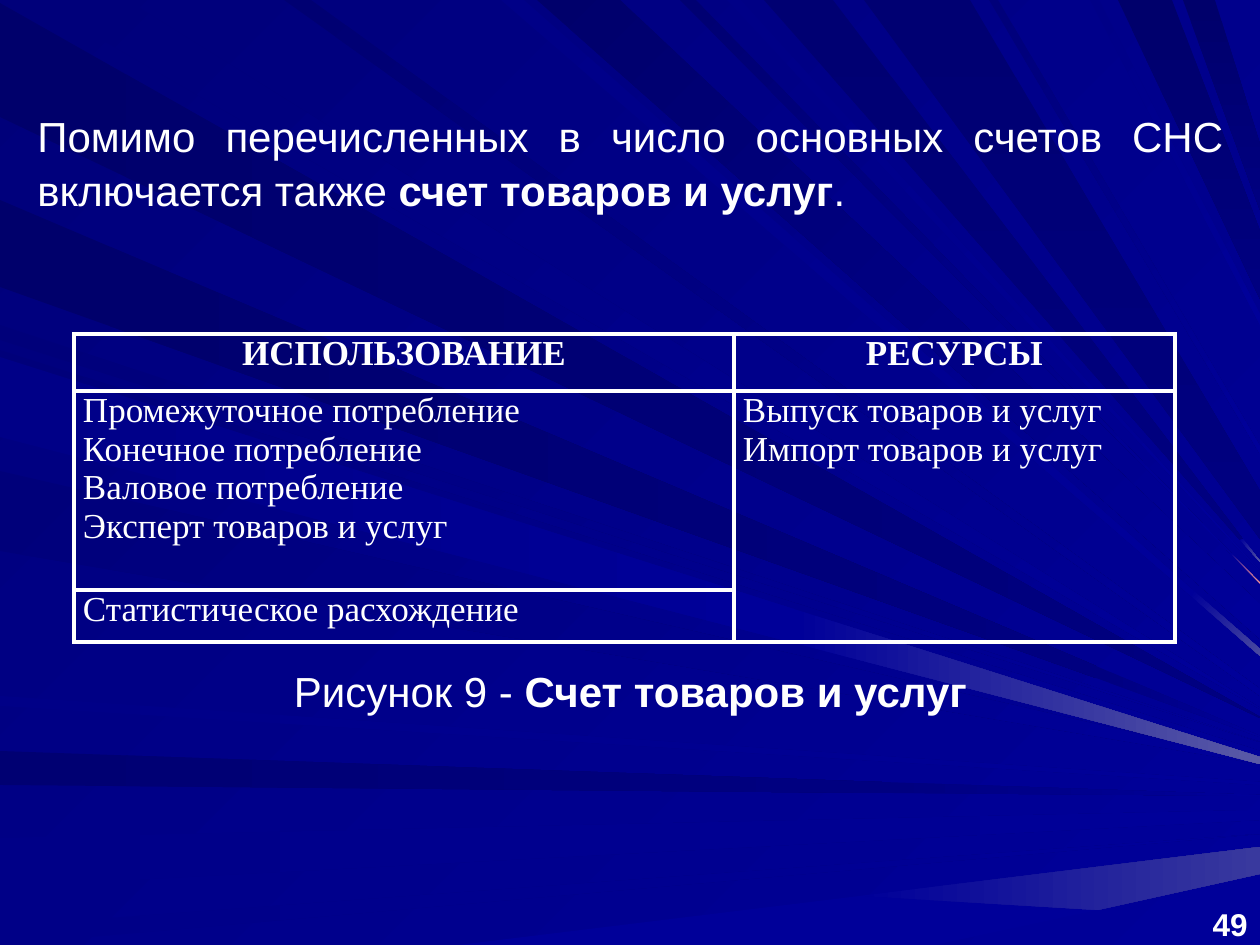
from lxml.etree import SubElement
from pptx import Presentation
from pptx.dml.color import RGBColor
from pptx.enum.text import MSO_ANCHOR as Anchor, PP_ALIGN as Align
from pptx.oxml.ns import qn
from pptx.util import Pt

PX = 914400 / 126
W, H = 1260, 945

COLORS = {
    "ink": "00006B", "night": "000072", "navy": "00007A", "dark": "000080",
    "royal": "000087", "blue": "000099", "white": "FFFFFF", "pink": "FF9999",
    "mist": "39399E", "haze": "4A4AA1", "glow": "5A5AA6",
}

# Light rays, back to front: slide edge they leave, the two places on that edge,
# the two heights at the right edge, first and last colour,
# then for rays with a tip: share of the length before it, its last colour
RAYS = [
    ("left", (3, 117), (717, 718), "ink", "dark"),
    ("top", (127, 33), (708, 709), "navy", "blue"),
    ("left", (751, 785), (795, 796), "night", "dark", 0.7, "blue"),
    ("left", (838, 887), (810, 820), "royal", "blue"),
    ("left", (926, 945), (834, 834), "royal", "blue"),
    ("bottom", (459, 935), (847, 874), "blue", "blue", 0.5, "mist"),
    ("left", (325, 340), (742, 742), "navy", "blue"),
    ("left", (200, 287), (736, 737), "ink", "dark", 0.87, "blue"),
    ("top", (501, 524), (656, 649), "royal", "blue", 0.91, "haze"),
    ("top", (537, 620), (639, 604), "ink", "blue"),
    ("top", (680, 696), (583, 583), "night", "blue", 0.95, "pink"),
    ("top", (764, 833), (562, 561), "night", "dark", 0.96, "glow"),
    ("top", (1118, 1172), (299, 231), "ink", "dark"),
    ("top", (1183, 1215), (210, 144), "ink", "dark"),
    ("left", (350, 431), (751, 759), "navy", "blue"),
    ("left", (471, 551), (762, 764), "navy", "blue"),
    ("left", (696, 706), (782, 785), "royal", "blue"),
    ("top", (284, 311), (696, 689), "night", "blue"),
    ("top", (727, 741), (572, 571), "royal", "blue"),
    ("top", (864, 970), (539, 491), "night", "dark"),
    ("top", (989, 998), (454, 446), "navy", "blue"),
    ("top", (1090, 1099), (325, 314), "royal", "blue"),
    ("left", (357, 437), (757, 764), "royal", "blue", 0.63, "glow"),
]

# Text runs: (text, bold)
INTRO = [("Помимо перечисленных в число основных счетов СНС включается также ", False),
         ("счет товаров и услуг", True), (".", False)]
CAPTION = [("Рисунок 9 ‑ ", False), ("Счет товаров и услуг", True)]
PAGE = [("49", True)]

TABLE_AT = 74, 334
COLS = [660, 441]
ROWS = [57, 199, 52]
HEADERS = ["ИСПОЛЬЗОВАНИЕ", "РЕСУРСЫ"]
USES = ["Промежуточное потребление", "Конечное потребление",
        "Валовое потребление", "Эксперт товаров и услуг"]
RESOURCES = ["Выпуск товаров и услуг", "Импорт товаров и услуг"]
BODY = [[USES, RESOURCES], [["Статистическое расхождение"], []]]


def px(n):
    return round(n * PX)


def rgb(name):
    return RGBColor.from_string(COLORS[name])


def paint(fill, first, last, angle):
    """Fill solid when both colours match, else with a clockwise-angled gradient."""
    if first == last:
        fill.solid()
        fill.fore_color.rgb = rgb(first)
        return
    fill.gradient()
    fill.gradient_angle = -angle % 360
    for stop, name in zip(fill.gradient_stops, (first, last)):
        stop.color.rgb = rgb(name)


def write(tf, lines, size=24, font="Arial", align=Align.LEFT, spacing=None):
    """Write one paragraph; each line is a list of (text, bold) runs."""
    p = tf.paragraphs[0]
    p.alignment = align
    p.line_spacing = spacing
    for i, line in enumerate(lines):
        if i:
            p.add_line_break()
        for text, bold in line:
            r = p.add_run()
            r.text = text
            r.font.name, r.font.size, r.font.bold = font, Pt(size), bold
            r.font.color.rgb = rgb("white")
    p.font.size = Pt(size)


def add_text(s, box, runs, anchor=Anchor.TOP, **fmt):
    tf = s.shapes.add_textbox(*map(px, box)).text_frame
    tf.word_wrap = True
    tf.vertical_anchor = anchor
    write(tf, [runs], **fmt)


def add_band(s, points, first, last, angle):
    builder = s.shapes.build_freeform(*points[0], scale=PX)
    builder.add_line_segments(points[1:], close=True)
    sp = builder.convert_to_shape()
    sp.shadow.inherit = False
    sp.line.fill.background()
    paint(sp.fill, first, last, angle)


def add_ray(s, edge, starts, ends, first, last, seam=1, tip=None):
    """Draw a ray to the right edge, cut in two at the seam if it has a tip."""
    if edge == "left":
        near = [(0, y) for y in starts]
        angle = 45 if first == "navy" else 0
    else:
        near = [(x, 0 if edge == "top" else H) for x in starts]
        angle = 90 if last == "dark" else 45
    far = [(W, y) for y in ends]
    cut = [(round(x + seam * (X - x)), round(y + seam * (Y - y)))
           for (x, y), (X, Y) in zip(near, far)]
    add_band(s, near + cut[::-1], first, last, angle)
    if tip:
        tip_first = "blue" if tip != "blue" else last
        add_band(s, cut + far[::-1], tip_first, tip, 45 if edge == "top" else 0)


def style_cell(cell):
    cell.margin_left = cell.margin_right = px(9)
    cell.margin_top = cell.margin_bottom = 0
    tc_pr = cell._tc.get_or_add_tcPr()
    for side in ("lnL", "lnR", "lnT", "lnB"):
        ln = SubElement(tc_pr, qn("a:" + side), w=str(Pt(2.25)))
        solid = SubElement(ln, qn("a:solidFill"))
        SubElement(solid, qn("a:srgbClr"), val=COLORS["white"])
    cell.fill.background()


def add_account_table(s):
    box = *TABLE_AT, sum(COLS), sum(ROWS)
    table = s.shapes.add_table(len(ROWS), len(COLS), *map(px, box)).table
    table.first_row = table.horz_banding = False
    for col, width in zip(table.columns, COLS):
        col.width = px(width)
    for row, height in zip(table.rows, ROWS):
        row.height = px(height)
    for i, texts in enumerate([[[h] for h in HEADERS], *BODY]):
        for j, lines in enumerate(texts):
            cell = table.cell(i, j)
            style_cell(cell)
            write(cell.text_frame, [[(text, i == 0)] for text in lines], size=20,
                  font="Times New Roman", align=Align.LEFT if i else Align.CENTER)
    table.cell(1, 1).merge(table.cell(2, 1))


def main():
    prs = Presentation()
    prs.slide_width, prs.slide_height = px(W), px(H)
    s = prs.slides.add_slide(prs.slide_layouts[6])
    paint(s.background.fill, "navy", "blue", 45)
    for ray in RAYS:
        add_ray(s, *ray)
    add_text(s, (1196, 900, 64, 49), PAGE, anchor=Anchor.BOTTOM, size=18, align=Align.RIGHT)
    add_text(s, (25, 100, 1211, 115), INTRO, align=Align.JUSTIFY, spacing=1.08)
    add_account_table(s)
    add_text(s, (25, 655, 1211, 63), CAPTION, align=Align.CENTER, spacing=1.08)
    prs.save("out.pptx")


if __name__ == "__main__":
    main()
